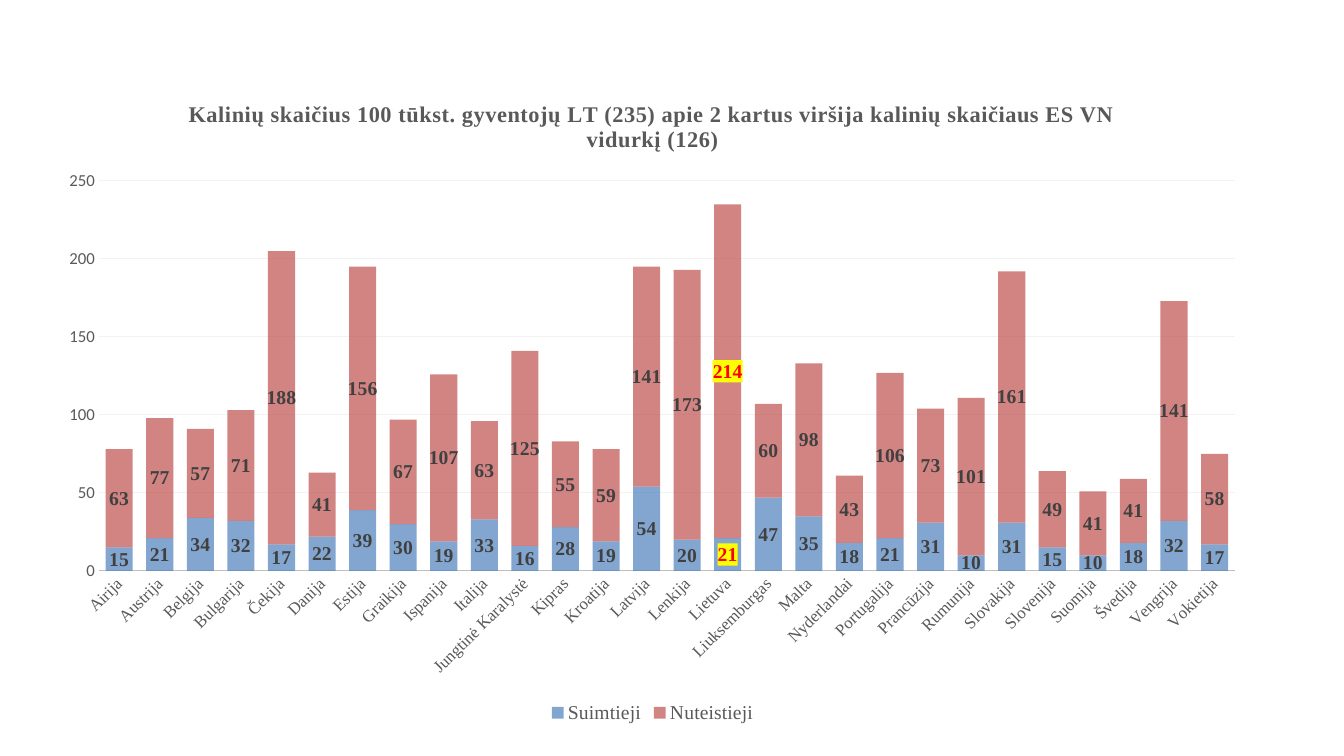
import pptx
import pptx.chart.data
import pptx.dml.color
import pptx.enum.chart
import pptx.oxml
import pptx.oxml.ns
import pptx.util

PX = 914400 / 100.8
THEME = {
    "serif": "Times New Roman", "sans": "Calibri",
    "text": "595959", "label": "404040", "alert": "FF0000", "highlight": "FFFF00",
    "axis": "BFBFBF", "grid": "F2F2F2", "bars": ["4F81BD", "C0504D"],
    "title_size": 16, "label_size": 14, "axis_size": 12,
}
TITLE = ("Kalinių skaičius 100 tūkst. gyventojų LT (235) apie 2 kartus "
         "viršija kalinių skaičiaus ES VN vidurkį (126)")
COUNTRIES = [
    "Airija", "Austrija", "Belgija", "Bulgarija", "Čekija", "Danija", "Estija",
    "Graikija", "Ispanija", "Italija", "Jungtinė Karalystė", "Kipras", "Kroatija",
    "Latvija", "Lenkija", "Lietuva", "Liuksemburgas", "Malta", "Nyderlandai",
    "Portugalija", "Prancūzija", "Rumunija", "Slovakija", "Slovenija", "Suomija",
    "Švedija", "Vengrija", "Vokietija",
]
PRISONERS = {
    "Suimtieji": [15, 21, 34, 32, 17, 22, 39, 30, 19, 33, 16, 28, 19, 54,
                  20, 21, 47, 35, 18, 21, 31, 10, 31, 15, 10, 18, 32, 17],
    "Nuteistieji": [63, 77, 57, 71, 188, 41, 156, 67, 107, 63, 125, 55, 59, 141,
                    173, 214, 60, 98, 43, 106, 73, 101, 161, 49, 41, 41, 141, 58],
}
CHART = (45, 77, 1215, 651)
PLOT = (99, 181, 1136, 390)


def px(n):
    return round(n * PX)


def style(font, size, color, face=THEME["serif"], bold=False):
    font.size = pptx.util.Pt(size)
    font.bold = bold
    font.name = face
    font.color.rgb = pptx.dml.color.RGBColor.from_string(color)


prs = pptx.Presentation()
prs.slide_width, prs.slide_height = px(1344), px(756)
s = prs.slides.add_slide(prs.slide_layouts[6])

data = pptx.chart.data.CategoryChartData()
data.categories = COUNTRIES
for name, values in PRISONERS.items():
    data.add_series(name, values)
chart = s.shapes.add_chart(pptx.enum.chart.XL_CHART_TYPE.COLUMN_STACKED,
                           *map(px, CHART), data).chart
style(chart.font, 10, "000000", THEME["sans"])

# Title
chart.has_title = True
p = chart.chart_title.text_frame.paragraphs[0]
r = p.add_run()
r.text = TITLE
style(r.font, THEME["title_size"], THEME["text"], bold=True)
r.font._element.set("spc", "50")
chart.chart_title.include_in_layout = False

# Legend
chart.has_legend = True
chart.legend.position = pptx.enum.chart.XL_LEGEND_POSITION.BOTTOM
chart.legend.include_in_layout = False
style(chart.legend.font, THEME["label_size"], THEME["text"])

# Axes
countries, counts = chart.category_axis, chart.value_axis
for axis, face in ((countries, THEME["serif"]), (counts, THEME["sans"])):
    axis.major_tick_mark = axis.minor_tick_mark = pptx.enum.chart.XL_TICK_MARK.NONE
    style(axis.tick_labels.font, THEME["axis_size"], THEME["text"], face)
counts.minimum_scale, counts.maximum_scale, counts.major_unit = 0, 250, 50
counts.format.line.fill.background()
counts.has_major_gridlines = True
for line, color in ((countries.format.line, THEME["axis"]),
                    (counts.major_gridlines.format.line, THEME["grid"])):
    line.width = pptx.util.Pt(0.75)
    line.color.rgb = pptx.dml.color.RGBColor.from_string(color)
chart.element.xpath(".//c:catAx/c:txPr/a:bodyPr")[0].set("rot", "-2700000")

# Stacked bars, with Lithuania's labels highlighted
plot = chart.plots[0]
plot.gap_width, plot.overlap, plot.vary_by_categories = 50, 100, False
for series, color in zip(plot.series, THEME["bars"]):
    series.format.fill.solid()
    series.format.fill.fore_color.rgb = pptx.dml.color.RGBColor.from_string(color)
    labels = series.data_labels
    labels.show_value = True
    labels.position = pptx.enum.chart.XL_LABEL_POSITION.CENTER
    style(labels.font, THEME["label_size"], THEME["label"], bold=True)
    lithuania = series.points[COUNTRIES.index("Lietuva")].data_label
    style(lithuania.font, THEME["label_size"], THEME["alert"], bold=True)
    lithuania.position = pptx.enum.chart.XL_LABEL_POSITION.CENTER

NS = pptx.oxml.ns.nsdecls("c", "a")
for color in chart.element.xpath(".//c:ser/c:spPr/a:solidFill/a:srgbClr"):
    color.append(pptx.oxml.parse_xml(f'<a:alpha {NS} val="70000"/>'))
for text in chart.element.xpath(".//c:dLbl/c:txPr"):
    for old in text.getparent().xpath("c:spPr"):
        text.getparent().remove(old)
    text.addprevious(pptx.oxml.parse_xml(
        f'<c:spPr {NS}><a:solidFill><a:srgbClr val="{THEME["highlight"]}"/>'
        '</a:solidFill></c:spPr>'))

# Plot position as fractions of the chart
left, top, width, height = CHART
fractions = {"x": (PLOT[0] - left) / width, "y": (PLOT[1] - top) / height,
             "w": PLOT[2] / width, "h": PLOT[3] / height}
modes = '<c:layoutTarget val="inner"/><c:xMode val="edge"/><c:yMode val="edge"/>'
sizes = "".join(f'<c:{key} val="{value:.4f}"/>' for key, value in fractions.items())
area = chart.element.xpath(".//c:plotArea")[0]
for old in area.xpath("c:layout"):
    area.remove(old)
area.insert(0, pptx.oxml.parse_xml(
    f"<c:layout {NS}><c:manualLayout>{modes}{sizes}</c:manualLayout></c:layout>"))

prs.save("out.pptx")
